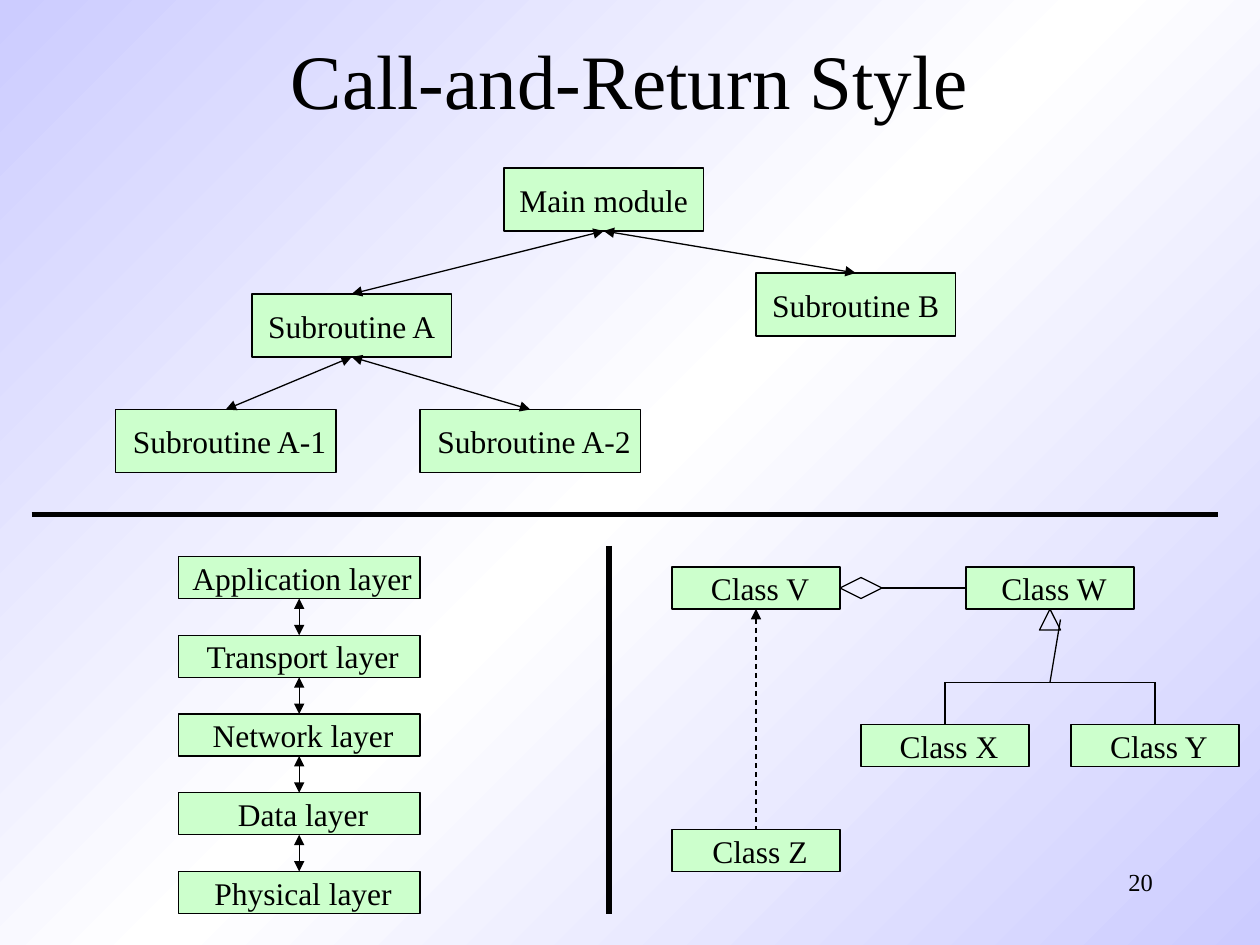
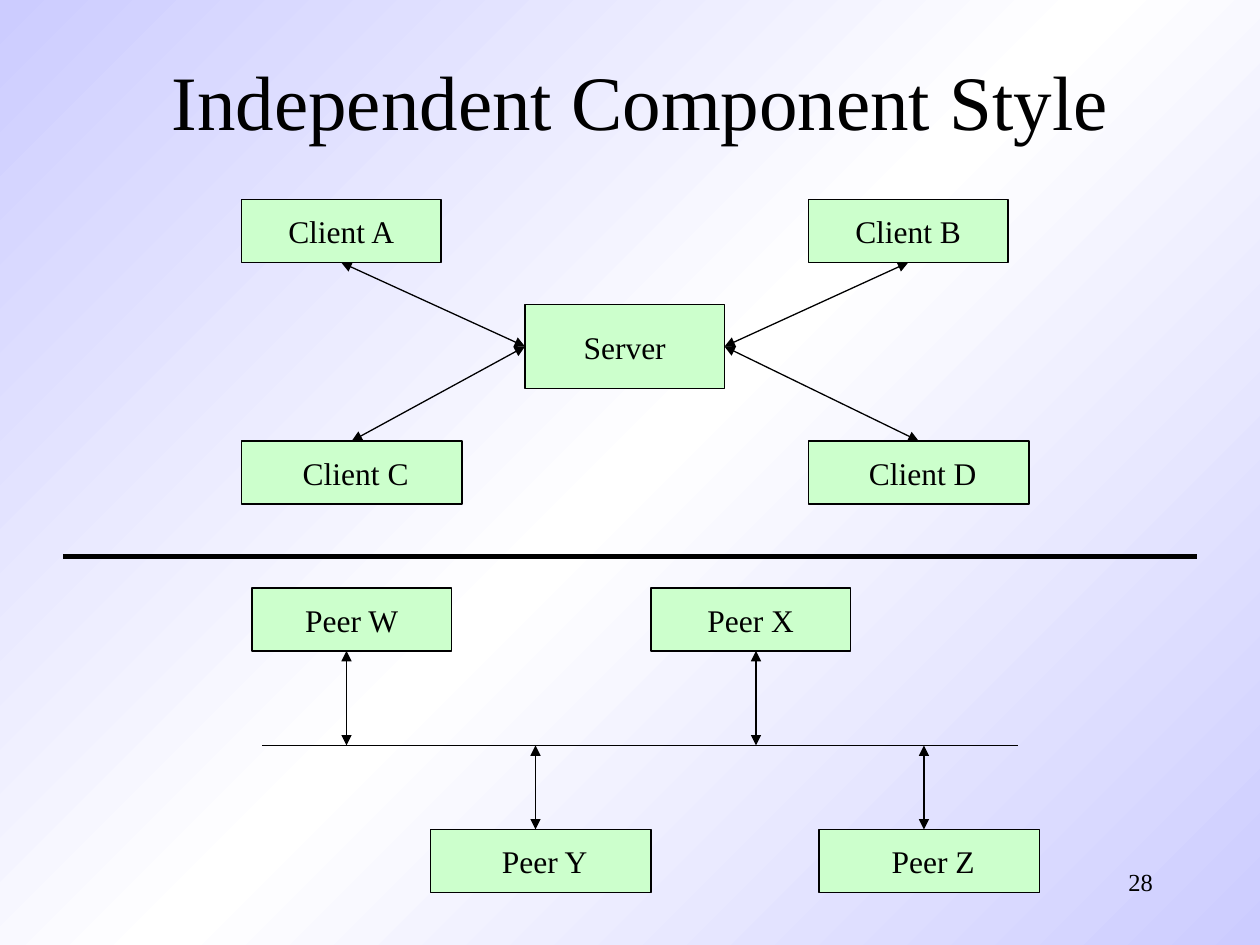
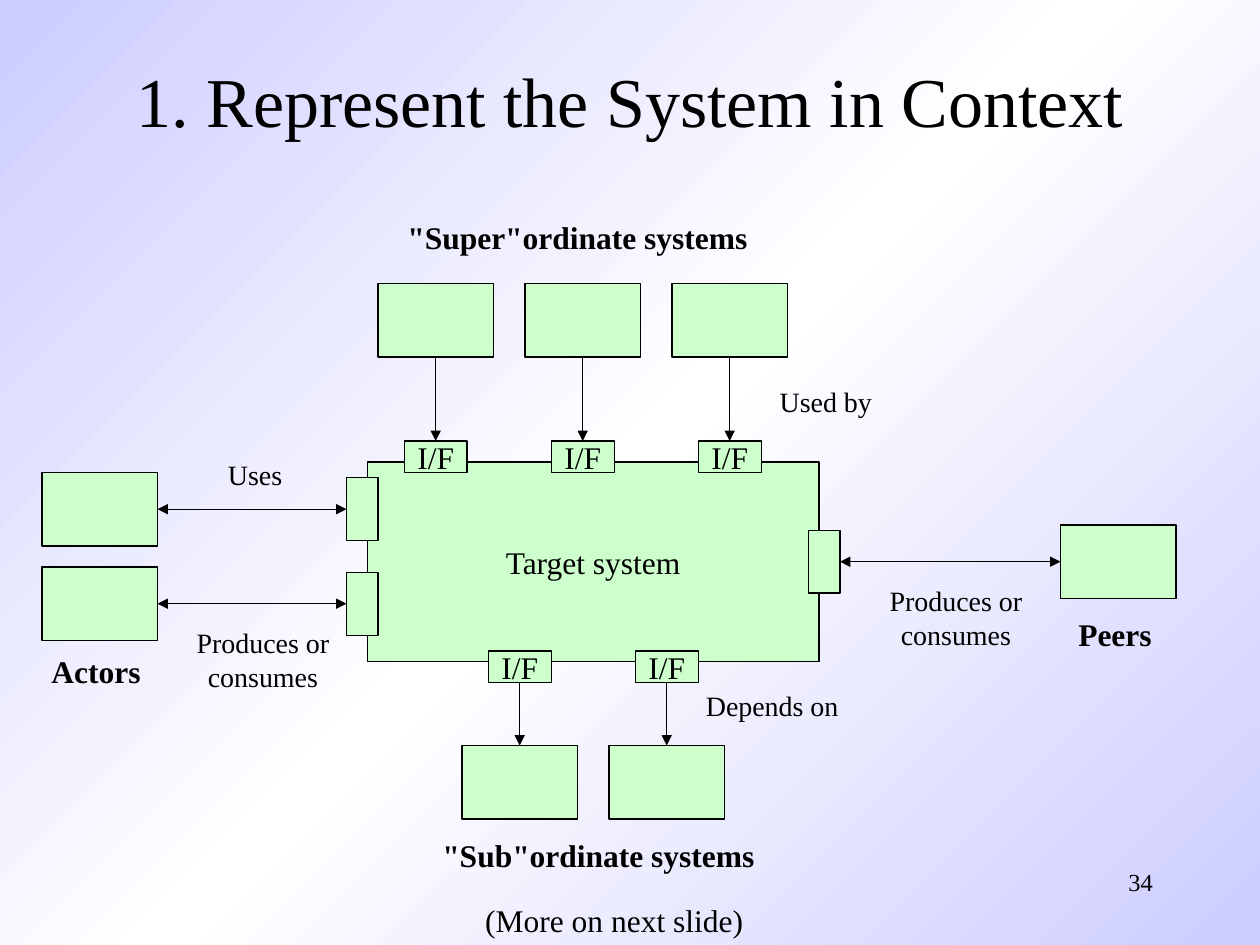
from copy import deepcopy
from dataclasses import dataclass

from pptx import Presentation
from pptx.dml.color import RGBColor
from pptx.enum.dml import MSO_LINE
from pptx.enum.shapes import MSO_CONNECTOR, MSO_SHAPE
from pptx.enum.text import MSO_ANCHOR, MSO_AUTO_SIZE, PP_ALIGN
from pptx.oxml.ns import qn
from pptx.oxml.xmlchemy import OxmlElement
from pptx.shapes.autoshape import Shape
from pptx.shapes.connector import Connector
from pptx.slide import Slide
from pptx.text.text import TextFrame
from pptx.util import Inches, Pt

RECTANGLE, DIAMOND, TRIANGLE = MSO_SHAPE.RECTANGLE, MSO_SHAPE.DIAMOND, MSO_SHAPE.ISOSCELES_TRIANGLE
STRAIGHT = MSO_CONNECTOR.STRAIGHT
DASH = MSO_LINE.DASH
MIDDLE, TOP_ANCHOR = MSO_ANCHOR.MIDDLE, MSO_ANCHOR.TOP
CENTER, RIGHT_ALIGN = PP_ALIGN.CENTER, PP_ALIGN.RIGHT
NO_AUTOFIT = MSO_AUTO_SIZE.NONE
TOP, LEFT, BOTTOM, RIGHT = range(4)

COLORS = {"ink": "000000", "box": "CCFFCC", "edge": "CCCCFF", "glow": "FFFFFF"}
FONT = "Times New Roman"
WIDTH, HEIGHT = Inches(10), Inches(7.5)
COLUMNS = 120
CELL = WIDTH // COLUMNS
THIN, THICK = 0.75, 3
TITLE_ONLY = 5


@dataclass(frozen=True)
class Area:
    column: float
    row: float
    columns: float
    rows: float

    def lengths(self) -> list[int]:
        return [cells(n) for n in (self.column, self.row, self.columns, self.rows)]


@dataclass(frozen=True)
class Label:
    text: str
    area: Area
    size: int = 18
    bold: bool = False


NUMBER_AREA = Area(86, 82, 25, 6)


def cells(count: float) -> int:
    return round(count * CELL)


def color(name: str) -> RGBColor:
    return RGBColor.from_string(COLORS[name])


def write(frame: TextFrame, text: str, size: int, bold: bool = False,
          align: PP_ALIGN = CENTER, anchor: MSO_ANCHOR = MIDDLE, wrap: bool = False) -> None:
    frame.text = text
    frame.word_wrap = wrap
    frame.auto_size = NO_AUTOFIT
    frame.vertical_anchor = anchor
    for para in frame.paragraphs:
        para.alignment = align
        for span in para.runs:
            span.font.name = FONT
            span.font.size = Pt(size)
            span.font.bold = bold
            span.font.color.rgb = color("ink")


def add_label(page: Slide, label: Label, align: PP_ALIGN = CENTER, wrap: bool = False) -> None:
    box = page.shapes.add_textbox(*label.area.lengths())
    write(box.text_frame, label.text, label.size, label.bold, align, TOP_ANCHOR, wrap)


def add_box(page: Slide, area: Area, text: str = "",
            kind: MSO_SHAPE = RECTANGLE, filled: bool = True) -> Shape:
    box = page.shapes.add_shape(kind, *area.lengths())
    box.shadow.inherit = False
    if filled:
        box.fill.solid()
        box.fill.fore_color.rgb = color("box")
    else:
        box.fill.background()
    box.line.color.rgb = color("ink")
    box.line.width = Pt(THIN)
    if text:
        write(box.text_frame, text, 18)
    return box


def add_line(page: Slide, start: tuple[float, float], end: tuple[float, float],
             heads: tuple[str, ...] = (), width: float = THIN, dashed: bool = False) -> Connector:
    line = page.shapes.add_connector(STRAIGHT, *map(cells, start + end))
    line.line.color.rgb = color("ink")
    line.line.width = Pt(width)
    if dashed:
        line.line.dash_style = DASH
    outline = line.line._get_or_add_ln()
    for head in heads:
        tip = OxmlElement(f"a:{head}")
        tip.set("type", "triangle")
        outline.append(tip)
    line.element.spPr.append(OxmlElement("a:effectLst"))
    return line


START, BOTH = ("headEnd",), ("headEnd", "tailEnd")


def join(page: Slide, first: Shape, first_side: int, second: Shape, second_side: int,
         heads: tuple[str, ...] = BOTH, dashed: bool = False) -> None:
    line = add_line(page, (0, 0), (0, 0), heads, dashed=dashed)
    line.begin_connect(first, first_side)
    line.end_connect(second, second_side)


def paint_background(deck: Presentation) -> None:
    master = deck.slide_master
    fill = master.background.fill
    fill.gradient()
    fill.gradient_angle = 315
    stop_list = master.element.find(f".//{qn('a:gsLst')}")
    stop_list.insert(1, deepcopy(stop_list[0]))
    for stop, position, name in zip(fill.gradient_stops, (0, 0.5, 1), ("edge", "glow", "edge")):
        stop.position = position
        stop.color.rgb = color(name)


def add_page(deck: Presentation, title: str, number: int, column: float, row: float,
             size: int = 44) -> Slide:
    page = deck.slides.add_slide(deck.slide_layouts[TITLE_ONLY])
    heading = page.shapes.title
    heading.left, heading.top, heading.width, heading.height = Area(column, row, 102, 15).lengths()
    write(heading.text_frame, title, size, wrap=True)
    add_label(page, Label(str(number), NUMBER_AREA, 14), RIGHT_ALIGN, True)
    return page


def draw_call_and_return(deck: Presentation) -> None:
    page = add_page(deck, "Call-and-Return Style", 20, 9, 0)
    main_module = add_box(page, Area(48, 16, 19, 6), "Main module")
    routine_a = add_box(page, Area(24, 28, 19, 6), "Subroutine A")
    routine_b = add_box(page, Area(72, 26, 19, 6), "Subroutine B")
    routine_a1 = add_box(page, Area(11, 39, 21, 6), " Subroutine A-1")
    routine_a2 = add_box(page, Area(40, 39, 21, 6), " Subroutine A-2")
    for caller, called in ((main_module, routine_a), (main_module, routine_b),
                           (routine_a, routine_a1), (routine_a, routine_a2)):
        join(page, caller, BOTTOM, called, TOP)

    add_line(page, (3, 49), (116, 49), width=THICK)
    add_line(page, (58, 52), (58, 87), width=THICK)

    names = ("Application", "Transport", "Network", "Data", "Physical")
    layers = [add_box(page, Area(17, 53 + 7.5 * index, 23, 4), f" {name} layer")
              for index, name in enumerate(names)]
    for upper, lower in zip(layers, layers[1:]):
        join(page, upper, BOTTOM, lower, TOP)

    places = {"V": (64, 54), "W": (92, 54), "X": (82, 69), "Y": (102, 69), "Z": (64, 79)}
    classes = {name: add_box(page, Area(column, row, 16, 4), f" Class {name}")
               for name, (column, row) in places.items()}
    aggregation = add_box(page, Area(80, 55, 4, 2), kind=DIAMOND, filled=False)
    inheritance = add_box(page, Area(99, 58, 2, 2), kind=TRIANGLE, filled=False)
    join(page, aggregation, RIGHT, classes["W"], LEFT, ())
    join(page, classes["V"], BOTTOM, classes["Z"], TOP, START, dashed=True)
    for name, column in (("X", 90), ("Y", 110)):
        add_line(page, (column, 69), (column, 65)).begin_connect(classes[name], TOP)
    add_line(page, (90, 65), (110, 65))
    add_line(page, (100, 65), (100, 60)).end_connect(inheritance, 3)


def draw_independent_components(deck: Presentation) -> None:
    page = add_page(deck, "Independent Component Style", 28, 10, 2)
    server = add_box(page, Area(50, 29, 19, 8), "Server")
    for column, side, upper, lower in ((23, LEFT, "A", "C"), (77, RIGHT, "B", "D")):
        upper_client = add_box(page, Area(column, 19, 19, 6), f"Client {upper}")
        lower_client = add_box(page, Area(column, 42, 21, 6), f" Client {lower}")
        join(page, server, side, upper_client, BOTTOM)
        join(page, server, side, lower_client, TOP)

    add_line(page, (6, 53), (114, 53), width=THICK)

    bus_row = 71
    add_line(page, (25, bus_row), (97, bus_row))
    for name, column, link_column in (("W", 24, 33), ("X", 62, 72)):
        add_box(page, Area(column, 56, 19, 6), f"Peer {name}")
        add_line(page, (link_column, 62), (link_column, bus_row), BOTH)
    for name, column, link_column in (("Y", 41, 51), ("Z", 78, 88)):
        add_box(page, Area(column, 79, 21, 6), f" Peer {name}")
        add_line(page, (link_column, bus_row), (link_column, 79), BOTH)


def draw_system_context(deck: Presentation) -> None:
    page = add_page(deck, "1. Represent the System in Context", 34, 9, 2, 40)
    add_box(page, Area(35, 44, 43, 19), "Target system")

    pitch = 14
    for index in range(3):
        system = add_box(page, Area(36 + pitch * index, 27, 11, 7))
        interface = add_box(page, Area(38.5 + pitch * index, 42, 6, 3), "I/F")
        join(page, interface, TOP, system, BOTTOM, START)
    for index in range(2):
        system = add_box(page, Area(44 + pitch * index, 71, 11, 7))
        interface = add_box(page, Area(46.5 + pitch * index, 62, 6, 3), "I/F")
        join(page, system, TOP, interface, BOTTOM, START)
    for row in (45, 54):
        actor = add_box(page, Area(4, row, 11, 7))
        port = add_box(page, Area(33, row + 0.5, 3, 6))
        join(page, port, LEFT, actor, RIGHT)
    peer = add_box(page, Area(101, 50, 11, 7))
    port = add_box(page, Area(77, 50.5, 3, 6))
    join(page, peer, LEFT, port, RIGHT)

    for label in (
        Label("Actors", Area(3.7, 61.5, 10.9, 4.8), bold=True),
        Label("Peers", Area(101.5, 58, 9.4, 4.8), bold=True),
        Label('"Super"ordinate systems', Area(37.6, 20.2, 34.8, 4.8), bold=True),
        Label('"Sub"ordinate systems', Area(40.9, 79, 32.2, 4.8), bold=True),
        Label("Used by", Area(73, 36, 11.3, 4.4), 16),
        Label("Produces or\nconsumes", Area(83.5, 55, 15.1, 7.7), 16),
        Label("Produces or\nconsumes", Area(17.5, 59, 15.1, 7.7), 16),
        Label("Depends on", Area(66, 65, 15.1, 4.4), 16),
        Label("Uses", Area(20.5, 43, 7.6, 4.4), 16),
        Label("(More on next slide)", Area(45, 85.2, 27, 4.8)),
    ):
        add_label(page, label)


def main() -> None:
    deck = Presentation()
    deck.slide_width, deck.slide_height = WIDTH, HEIGHT
    paint_background(deck)
    draw_call_and_return(deck)
    draw_independent_components(deck)
    draw_system_context(deck)
    deck.save("out.pptx")


if __name__ == "__main__":
    main()
